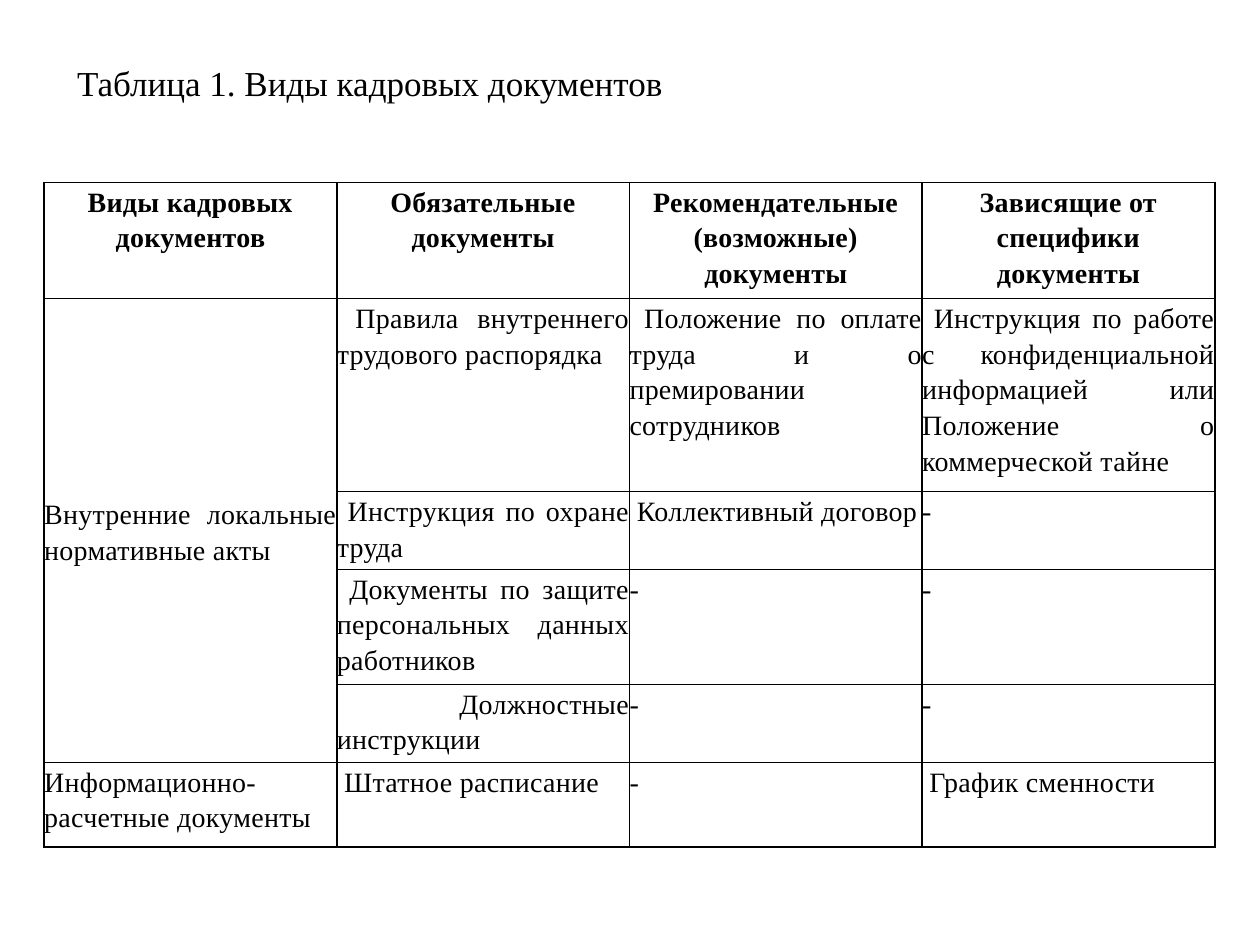
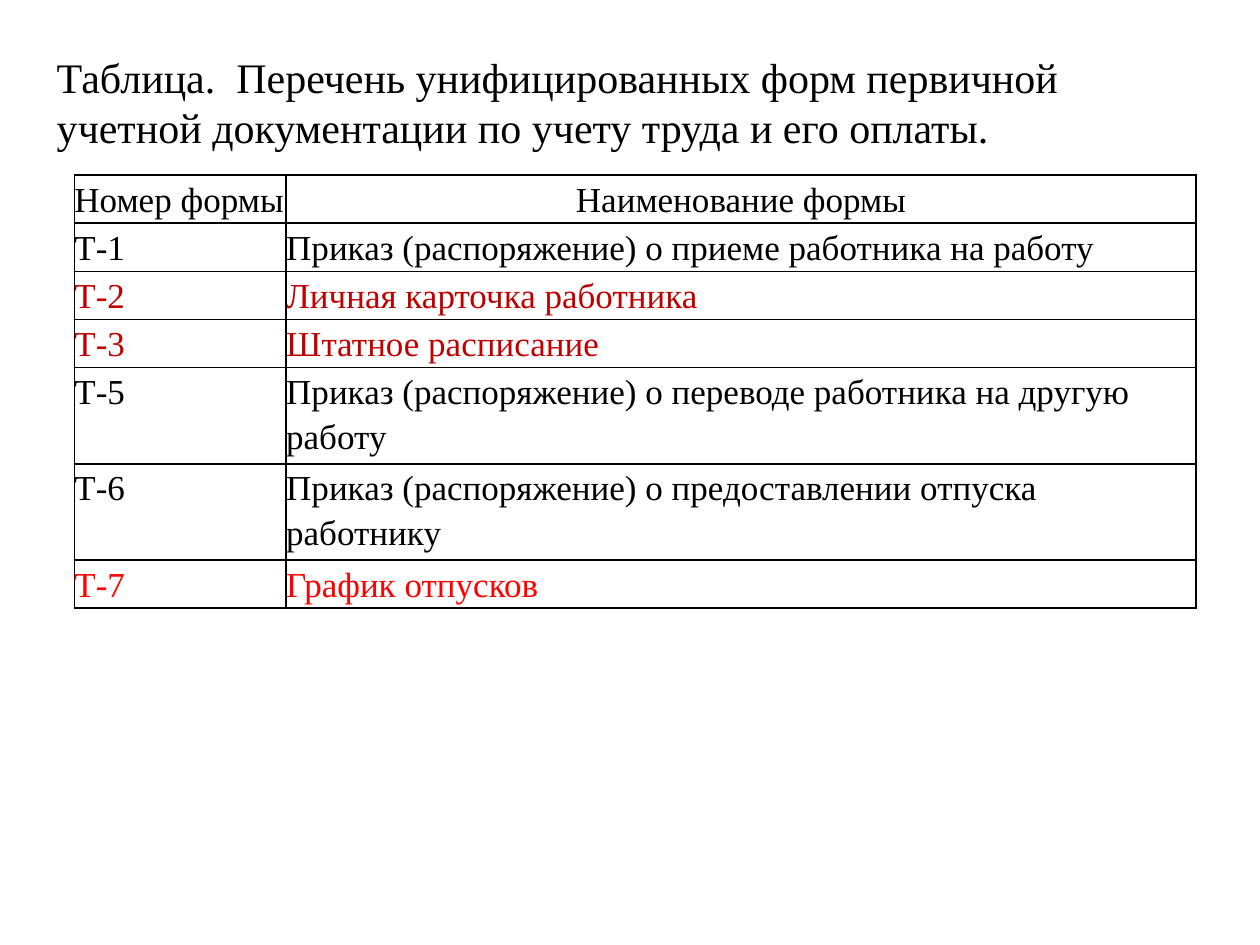
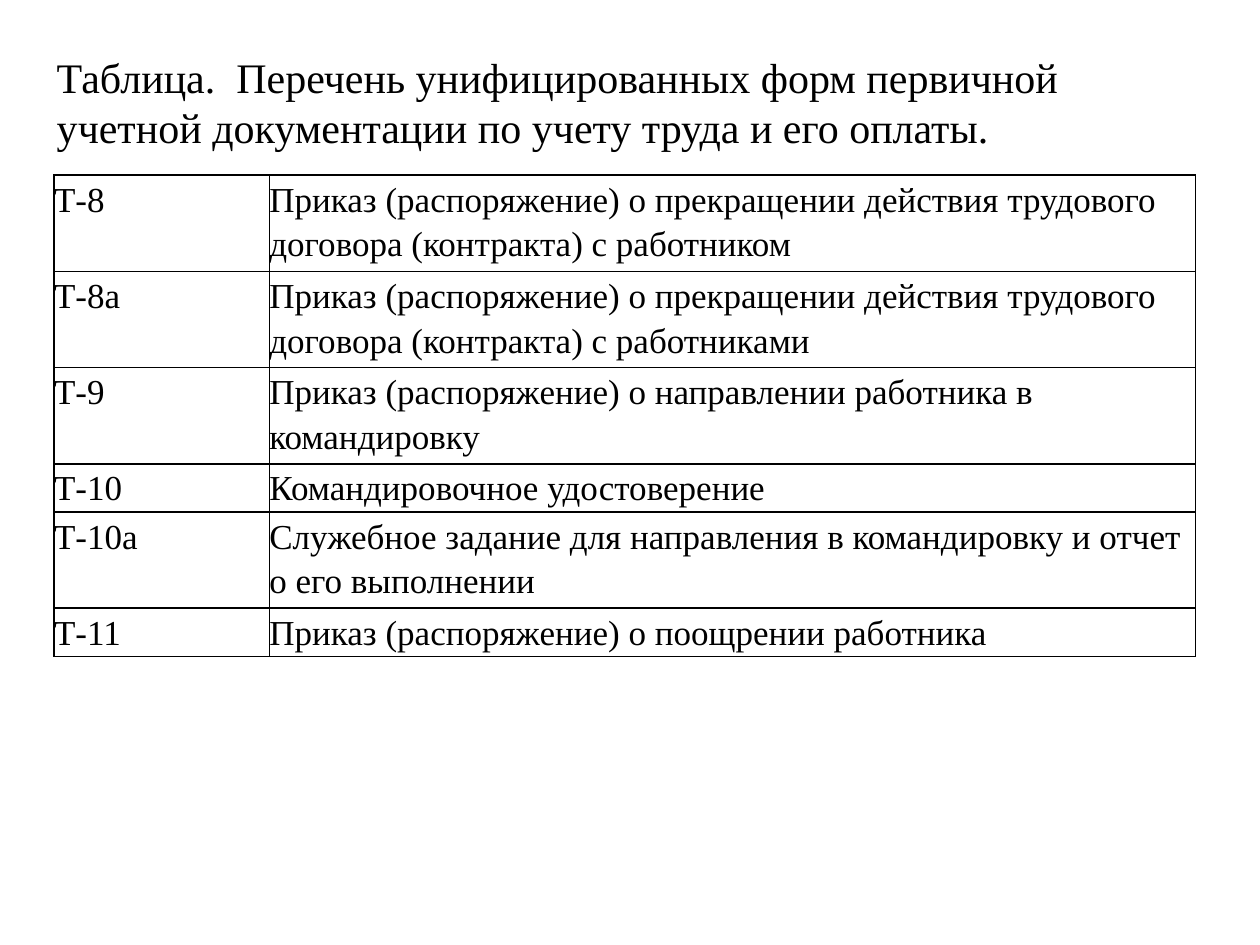
"""Build three slides with tables of personnel documents and forms."""
from lxml.etree import SubElement
from pptx import Presentation
from pptx.dml.color import RGBColor as RGB
from pptx.enum.text import MSO_ANCHOR as ANCHOR, MSO_AUTO_SIZE as AUTO, PP_ALIGN as ALIGN
from pptx.oxml.ns import qn
from pptx.util import Cm, Pt

COLORS = {"black": "000000", "dark_red": "C00000", "red": "FF0000"}
FONT = "Times New Roman"
LINE = 0.97
TITLE_FORMAT = {"auto_size": AUTO.NONE, "word_wrap": True, "vertical_anchor": ANCHOR.TOP}
CELL_FORMAT = {"margin_left": 0, "margin_right": 0, "margin_top": 0, "margin_bottom": 0,
               "vertical_anchor": ANCHOR.TOP}
FORMS_TITLE = "Таблица.  Перечень унифицированных форм первичной учетной документации по учету труда и его оплаты."

kinds = [
    ["Виды кадровых документов", "Обязательные документы",
     "Рекомендательные (возможные) документы", "Зависящие от специфики документы"],
    ["Внутренние локальные нормативные акты", " Правила внутреннего трудового распорядка",
     " Положение по оплате труда и о премировании сотрудников",
     " Инструкция по работе с конфиденциальной информацией или Положение о коммерческой тайне"],
    ["", " Инструкция по охране труда", " Коллективный договор", "-"],
    ["", " Документы по защите персональных данных работников", "-", "-"],
    ["", " Должностные инструкции", "-", "-"],
    ["Информационно-расчетные документы", " Штатное расписание", "-", " График сменности"],
]
forms = [
    ["Номер формы", "Наименование формы"],
    ["Т-1", "Приказ (распоряжение) о приеме работника на работу"],
    ["Т-2", "Личная карточка работника"],
    ["Т-3", "Штатное расписание"],
    ["Т-5", "Приказ (распоряжение) о переводе работника на другую работу"],
    ["Т-6", "Приказ (распоряжение) о предоставлении отпуска работнику"],
    ["Т-7", "График отпусков"],
]
more_forms = [
    ["Т-8", "Приказ (распоряжение) о прекращении действия трудового договора (контракта) с работником"],
    ["Т-8а", "Приказ (распоряжение) о прекращении действия трудового договора (контракта) с работниками"],
    ["Т-9", "Приказ (распоряжение) о направлении работника в командировку"],
    ["Т-10", "Командировочное удостоверение"],
    ["Т-10а", "Служебное задание для направления в командировку и отчет о его выполнении"],
    ["Т-11", "Приказ (распоряжение) о поощрении работника"],
]

slides = [
    {"title": "Таблица 1. Виды кадровых документов", "title_size": 20,
     "title_box": (1.3, 1.12, 22.6, 1.88), "rows": kinds, "at": (0.89, 3.68),
     "widths": [5.9] * 4, "heights": [2.34, 3.89, 1.57, 2.32, 1.57, 1.7],
     "size": 16, "align": ALIGN.JUSTIFY, "header": range(4), "bold": True,
     "spacing": "20", "merge": ((1, 0), (4, 0)), "colors": {}},
    {"title": FORMS_TITLE, "title_size": 24,
     "title_box": (0.89, 0.91, 23, 3.33), "rows": forms, "at": (1.5, 3.53),
     "widths": [4.27, 18.34], "heights": [LINE * n for n in (1, 1, 1, 1, 2, 2, 1)],
     "size": 20, "align": ALIGN.LEFT, "header": [1], "bold": False,
     "spacing": "0", "merge": None, "colors": {2: "dark_red", 3: "dark_red", 6: "red"}},
    {"title": FORMS_TITLE, "title_size": 24,
     "title_box": (0.89, 0.91, 23, 3.33), "rows": more_forms, "at": (1.09, 3.53),
     "widths": [4.34, 18.67], "heights": [LINE * n for n in (2, 2, 2, 1, 2, 1)],
     "size": 20, "align": ALIGN.LEFT, "header": [], "bold": False,
     "spacing": "0", "merge": None, "colors": {}},
]


def add_run(p, text, size, color="black", bold=False):
    r = p.add_run()
    r.text = text
    for name, value in {"name": FONT, "size": Pt(size), "bold": bold}.items():
        setattr(r.font, name, value)
    r.font.color.rgb = RGB.from_string(COLORS[color])
    return r


def add_borders(cell):
    tc_pr = cell._tc.get_or_add_tcPr()
    for side in ("lnL", "lnR", "lnT", "lnB"):
        ln = SubElement(tc_pr, qn(f"a:{side}"), w=str(Pt(1)))
        fill = SubElement(ln, qn("a:solidFill"))
        SubElement(fill, qn("a:srgbClr"), val=COLORS["black"])


prs = Presentation()
prs.slide_width, prs.slide_height = Cm(25.4), Cm(19.05)

for data in slides:
    s = prs.slides.add_slide(prs.slide_layouts[5])
    sp = s.shapes.title
    sp.left, sp.top, sp.width, sp.height = map(Cm, data["title_box"])
    tf = sp.text_frame
    for name, value in TITLE_FORMAT.items():
        setattr(tf, name, value)
    p = tf.paragraphs[0]
    p.alignment = ALIGN.LEFT
    add_run(p, data["title"], data["title_size"])

    rows, widths, heights = data["rows"], data["widths"], data["heights"]
    left, top = data["at"]
    table = s.shapes.add_table(len(rows), len(widths), Cm(left), Cm(top),
                               Cm(sum(widths)), Cm(sum(heights))).table
    table.first_row = table.horz_banding = False
    for column, width in zip(table.columns, widths):
        column.width = Cm(width)
    for row, height in zip(table.rows, heights):
        row.height = Cm(height)

    for i, texts in enumerate(rows):
        for j, text in enumerate(texts):
            cell = table.cell(i, j)
            for name, value in CELL_FORMAT.items():
                setattr(cell, name, value)
            add_borders(cell)
            cell.fill.background()
            if not text:
                continue
            header = i == 0 and j in data["header"]
            p = cell.text_frame.paragraphs[0]
            p.line_spacing = 1.15
            p.alignment = ALIGN.CENTER if header else data["align"]
            r = add_run(p, text, data["size"], data["colors"].get(i, "black"),
                        header and data["bold"])
            r._r.get_or_add_rPr().set("spc", data["spacing"])

    if data["merge"]:
        first, last = data["merge"]
        table.cell(*first).merge(table.cell(*last))
        table.cell(*first).vertical_anchor = ANCHOR.MIDDLE

prs.save("out.pptx")
